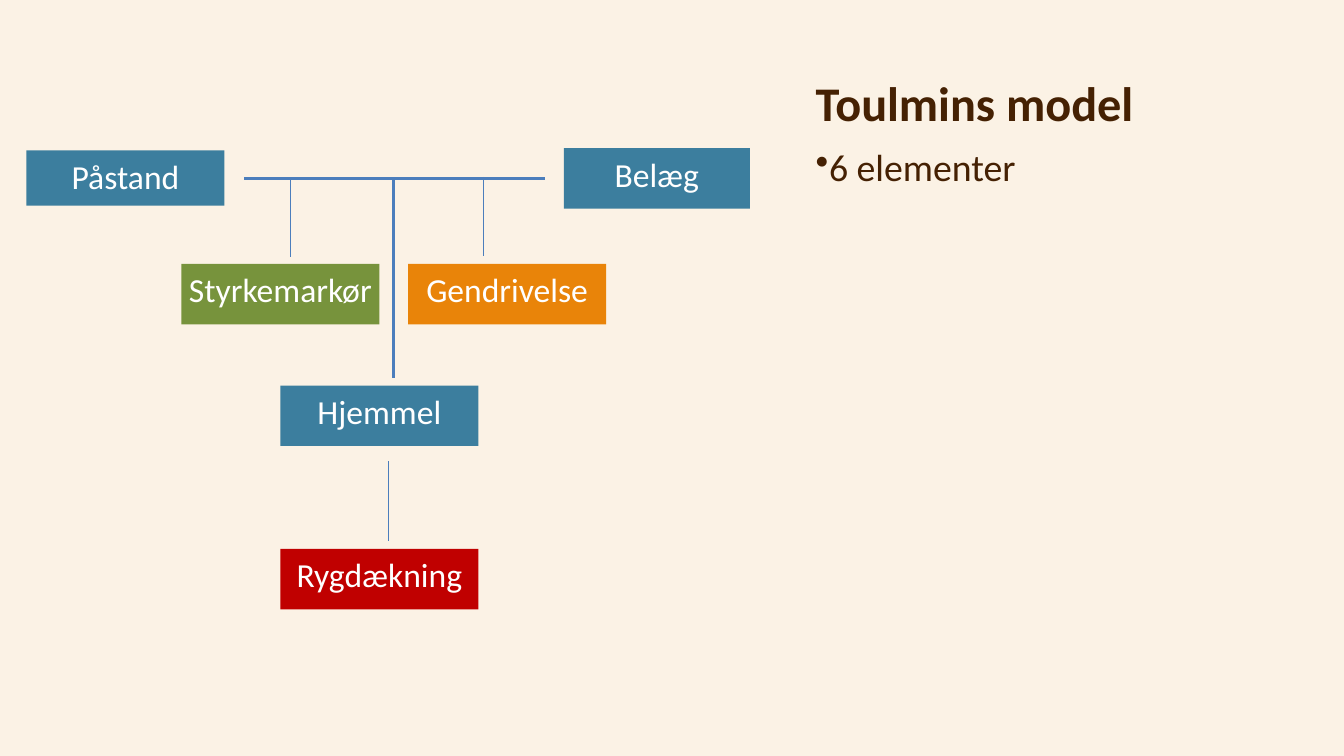
from lxml import etree
from pptx import Presentation
from pptx.dml.color import RGBColor
from pptx.enum.shapes import MSO_CONNECTOR, MSO_SHAPE
from pptx.enum.text import MSO_ANCHOR, PP_ALIGN
from pptx.oxml.ns import qn
from pptx.util import Inches, Pt

RECT = MSO_SHAPE.RECTANGLE
STRAIGHT = MSO_CONNECTOR.STRAIGHT
TOP = MSO_ANCHOR.TOP
LEFT, CENTER = PP_ALIGN.LEFT, PP_ALIGN.CENTER

FONT = "Calibri"
CREAM, BROWN, WHITE = "FBF2E5", "452103", "FFFFFF"
TEAL, RED, GREEN, ORANGE = "3C7E9E", "C00000", "77933C", "E98409"
BLUE = "4B7EBC"
THICK, THIN = 3, 0.75
WIDE, HIGH = 2.62, 0.8
MID, ROW, BAR = 3.71, 3.49, 2.36


def paint(fill, color):
    fill.solid()
    fill.fore_color.rgb = RGBColor.from_string(color)


def write(para, text, size=32, color=WHITE, bold=False, align=LEFT,
          bullet=None, before=None, spacing=None):
    para.alignment = align
    if before is not None:
        para.space_before = Pt(before)
    if spacing is not None:
        para.line_spacing = spacing
    if bullet:
        props = para._p.get_or_add_pPr()
        etree.SubElement(props, qn("a:buChar"), char=bullet)
    run = para.add_run()
    run.text = text
    run.font.name = FONT
    run.font.size = Pt(size)
    run.font.bold = bold
    run.font.color.rgb = RGBColor.from_string(color)


def inset(frame, side, top):
    frame.word_wrap = True
    frame.vertical_anchor = TOP
    frame.margin_left = frame.margin_right = Inches(side)
    frame.margin_top = frame.margin_bottom = Inches(top)


def box(slide, text, color, left, top, width=WIDE, height=HIGH):
    shape = slide.shapes.add_shape(
        RECT, Inches(left), Inches(top), Inches(width), Inches(height))
    shape.shadow.inherit = False
    paint(shape.fill, color)
    shape.line.fill.background()
    inset(shape.text_frame, 0.05, 0.07)
    write(shape.text_frame.paragraphs[0], text, align=CENTER)


def link(slide, x1, y1, x2, y2, weight=THIN):
    line = slide.shapes.add_connector(
        STRAIGHT, Inches(x1), Inches(y1), Inches(x2), Inches(y2))
    paint(line.line.fill, BLUE)
    line.line.width = Pt(weight)
    etree.SubElement(line._element.spPr, qn("a:effectLst"))


def heading(slide):
    area = slide.shapes.add_textbox(
        Inches(10.66), Inches(0.52), Inches(7.22), Inches(2.07))
    frame = area.text_frame
    inset(frame, 0.13, 0.07)
    write(frame.paragraphs[0], "Toulmins model", size=46, color=BROWN,
          bold=True, spacing=1.5)
    write(frame.add_paragraph(), "6 elementer", size=36, color=BROWN,
          bullet="•", before=12)


def main():
    deck = Presentation()
    deck.slide_width, deck.slide_height = Inches(17.78), Inches(10)
    slide = deck.slides.add_slide(deck.slide_layouts[6])
    paint(slide.background.fill, CREAM)
    heading(slide)

    box(slide, "Belæg", TEAL, 7.46, 1.96, width=2.46)
    box(slide, "Påstand", TEAL, 0.35, 1.99, height=0.73)
    box(slide, "Hjemmel", TEAL, MID, 5.1)
    box(slide, "Rygdækning", RED, MID, 7.26)
    box(slide, "Styrkemarkør", GREEN, 2.4, ROW)
    box(slide, "Gendrivelse", ORANGE, 5.4, ROW)

    link(slide, 3.23, BAR, 7.21, BAR, THICK)
    link(slide, 5.21, BAR, 5.21, 5, THICK)
    for x, top, end in ((3.84, BAR, 3.4), (6.4, 2.34, 3.39), (5.14, 6.1, 7.15)):
        link(slide, x, top, x, end)

    deck.save("out.pptx")


if __name__ == "__main__":
    main()
